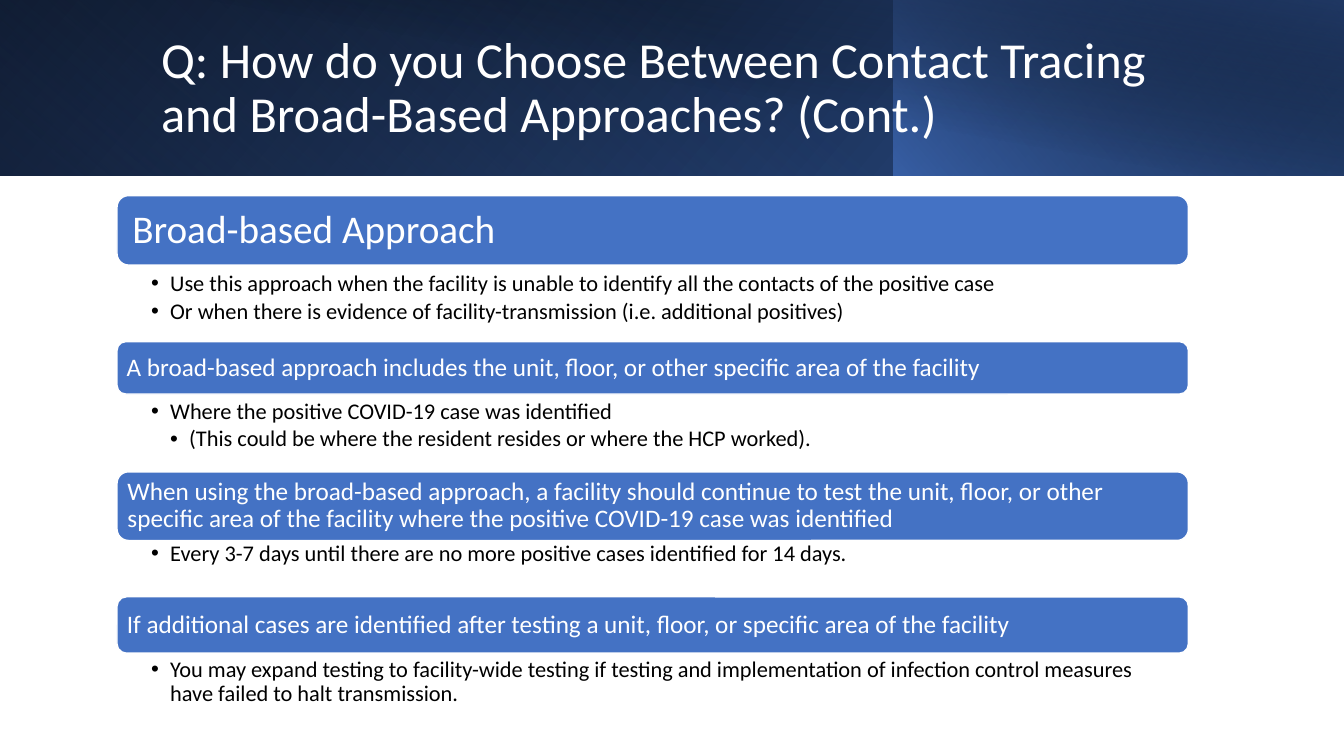
import pptx
import pptx.util
import pptx.dml.color
import pptx.enum.shapes
import pptx.enum.text
import pptx.oxml
import pptx.oxml.ns
from lxml import etree

Cm, Pt = pptx.util.Cm, pptx.util.Pt
MIDDLE = pptx.enum.text.MSO_ANCHOR.MIDDLE
TOP = pptx.enum.text.MSO_ANCHOR.TOP

TITLE = "Q: How do you Choose Between Contact Tracing and Broad-Based Approaches? (Cont.)"

# left, width (cm), rotation, flipped, gradient angle, stops as (position, colour, opacity)
BANDS = [
    (0, 33.87, 0, True, 140, [(0, "000000", 100), (100, "2F5597", 100)]),
    (0, 22.55, 180, True, 230, [(20, "4472C4", 0), (100, "203864", 55)]),
    (22.53, 11.34, 0, True, 220, [(0, "4472C4", 66), (100, "000000", 30)]),
    (1.27, 32.6, 0, False, 280, [(50, "000000", 0), (99, "203864", 52)]),
]
BAND_HEIGHT = 4.43

# heading, its size, bar top and height (cm), top of bullets (cm), bullets as (level, text)
SECTIONS = [
    ("Broad-based Approach", 28, 4.93, 1.75, 6.81, [
        (1, "Use this approach when the facility is unable to identify all the contacts "
            "of the positive case"),
        (1, "Or when there is evidence of facility-transmission (i.e. additional positives)"),
    ]),
    ("A broad-based approach includes the unit, floor, or other specific area of the facility",
     18, 8.61, 1.32, 10.03, [
        (1, "Where the positive COVID-19 case was identified"),
        (2, "(This could be where the resident resides or where the HCP worked)."),
     ]),
    ("When using the broad-based approach, a facility should continue to test the unit, floor, "
     "or other specific area of the facility where the positive COVID-19 case was identified",
     18, 11.89, 1.73, 13.61, [
        (1, "Every 3-7 days until there are no more positive cases identified for 14 days."),
     ]),
    ("If additional cases are identified after testing a unit, floor, or specific area "
     "of the facility", 18, 15.04, 1.42, 16.54, [
        (1, "You may expand testing to facility-wide testing if testing and implementation of "
            "infection control measures have failed to halt transmission."),
     ]),
]
SECTION_LEFT, SECTION_WIDTH = 2.95, 27
BULLETS_HEIGHT = 1.7
BULLET_INDENT = Cm(0.48)


def color(value):
    return pptx.dml.color.RGBColor.from_string(value)


def set_gradient(shape, angle, stops):
    """Fill with a linear gradient whose stops carry their own opacity."""
    stop_xml = "".join(
        f'<a:gs pos="{position * 1000}"><a:srgbClr val="{value}">'
        f'<a:alpha val="{opacity * 1000}"/></a:srgbClr></a:gs>'
        for position, value, opacity in stops)
    gradient = pptx.oxml.parse_xml(
        f'<a:gradFill {pptx.oxml.ns.nsdecls("a")} rotWithShape="1"><a:gsLst>{stop_xml}</a:gsLst>'
        f'<a:lin ang="{angle * 60000}" scaled="0"/></a:gradFill>')
    shape.element.spPr.find(pptx.oxml.ns.qn("a:prstGeom")).addnext(gradient)


def set_frame(frame, anchor, insets):
    frame.word_wrap = True
    frame.auto_size = pptx.enum.text.MSO_AUTO_SIZE.NONE
    frame.vertical_anchor = anchor
    (frame.margin_left, frame.margin_top,
     frame.margin_right, frame.margin_bottom) = map(Cm, insets)


def write(paragraph, text, size, value):
    paragraph.text = text
    paragraph.alignment = pptx.enum.text.PP_ALIGN.LEFT
    paragraph.line_spacing = 0.9
    paragraph.font.name = "Calibri"
    paragraph.font.size = Pt(size)
    paragraph.font.color.rgb = color(value)


def add_bullet(paragraph, level):
    paragraph.level = level
    properties = paragraph._p.get_or_add_pPr()
    properties.set("marL", str(level * BULLET_INDENT))
    properties.set("indent", str(-BULLET_INDENT))
    etree.SubElement(properties, pptx.oxml.ns.qn("a:buFont"), typeface="Arial")
    etree.SubElement(properties, pptx.oxml.ns.qn("a:buChar"), char="•")


def add_bands(shapes):
    for left, width, rotation, flipped, angle, stops in BANDS:
        band = shapes.add_shape(pptx.enum.shapes.MSO_SHAPE.RECTANGLE,
                                Cm(left), 0, Cm(width), Cm(BAND_HEIGHT))
        band.shadow.inherit = False
        band.line.fill.background()
        band.rotation = rotation
        if flipped:
            band.element.spPr.xfrm.set("flipH", "1")
        set_gradient(band, angle, stops)


def add_title(title):
    title.element.getparent().append(title.element)  # in front of the bands
    title.left, title.top, title.width, title.height = map(Cm, (3.81, 0.81, 27.48, 2.87))
    set_frame(title.text_frame, MIDDLE, (0.25, 0.13, 0.25, 0.13))
    write(title.text_frame.paragraphs[0], TITLE, 36, "FFFFFF")


def add_section(shapes, heading, size, top, height, bullets_top, bullets):
    bar = shapes.add_shape(pptx.enum.shapes.MSO_SHAPE.ROUNDED_RECTANGLE,
                           Cm(SECTION_LEFT), Cm(top), Cm(SECTION_WIDTH), Cm(height))
    bar.shadow.inherit = False
    bar.fill.solid()
    bar.fill.fore_color.rgb = color("4472C4")
    bar.line.color.rgb = color("FFFFFF")
    bar.line.width = Pt(1)
    set_frame(bar.text_frame, MIDDLE, [0.3 if size > 18 else 0.18] * 4)
    write(bar.text_frame.paragraphs[0], heading, size, "FFFFFF")

    details = shapes.add_textbox(Cm(SECTION_LEFT), Cm(bullets_top),
                                 Cm(SECTION_WIDTH), Cm(BULLETS_HEIGHT)).text_frame
    set_frame(details, TOP, (0.86, 0.05, 0.3, 0.05))
    for number, (level, text) in enumerate(bullets):
        paragraph = details.add_paragraph() if number else details.paragraphs[0]
        add_bullet(paragraph, level)
        write(paragraph, text, 16, "000000")
        paragraph.space_after = Pt(2.5)


def main():
    presentation = pptx.Presentation()
    presentation.slide_width, presentation.slide_height = Cm(33.87), Cm(19.05)
    slide = presentation.slides.add_slide(presentation.slide_layouts[5])
    add_bands(slide.shapes)
    add_title(slide.shapes.title)
    for section in SECTIONS:
        add_section(slide.shapes, *section)
    presentation.save("out.pptx")


if __name__ == "__main__":
    main()
